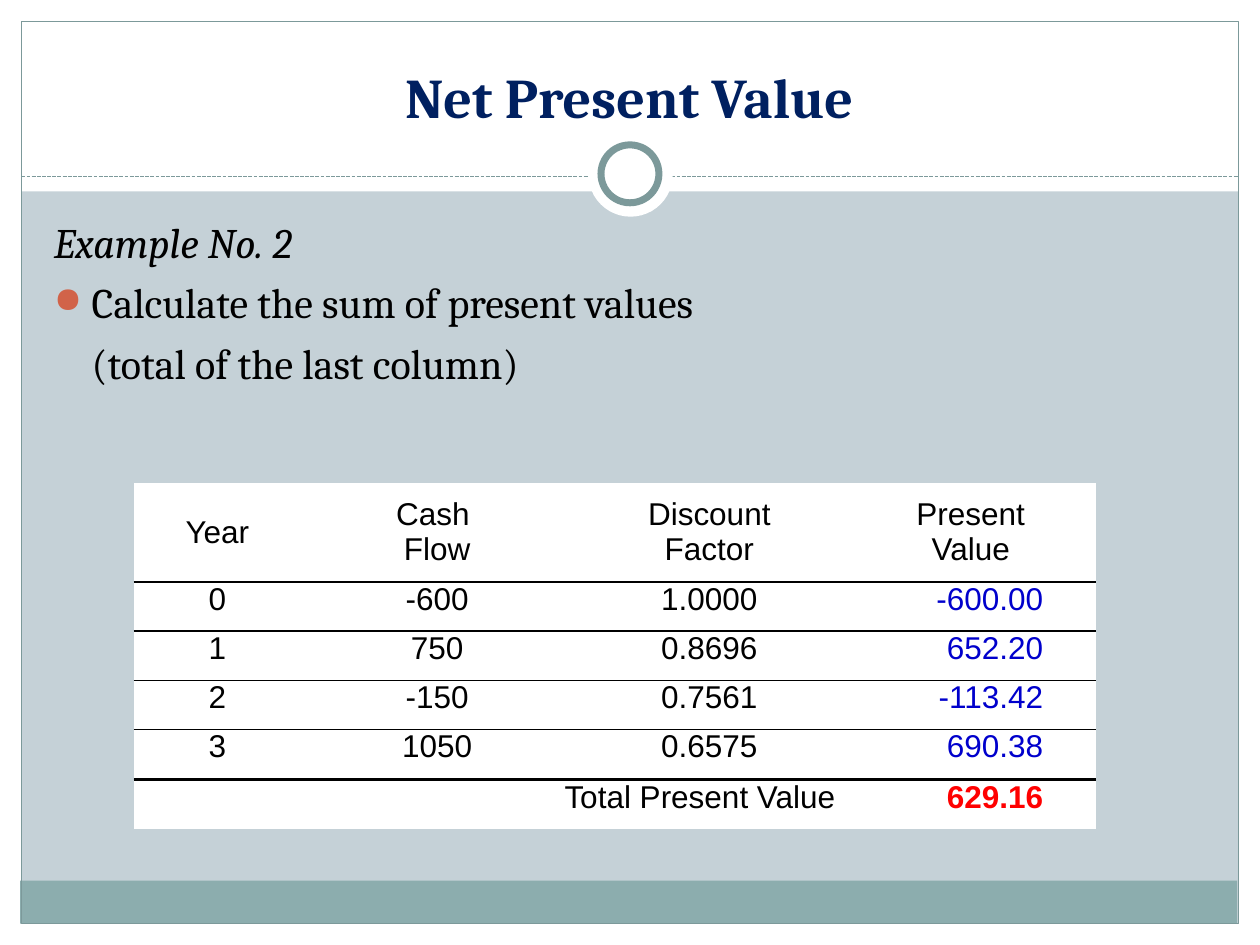
from lxml import etree
from pptx import Presentation
from pptx import util as u
from pptx.dml.color import RGBColor
from pptx.enum import dml, shapes, text
from pptx.oxml import ns

BACKDROP = RGBColor(0xC5, 0xD1, 0xD7)
WHITE = RGBColor(0xFF, 0xFF, 0xFF)
BLACK = RGBColor(0, 0, 0)
TEAL = RGBColor(0x8C, 0xAD, 0xAE)
SLATE = RGBColor(0x7C, 0x99, 0x9A)
NAVY = RGBColor(0x00, 0x20, 0x60)
RUST = RGBColor(0xD1, 0x63, 0x49)
BLUE = RGBColor(0x00, 0x00, 0xCC)
RED = RGBColor(0xFF, 0, 0)

LEFT, CENTER, RIGHT = text.PP_ALIGN.LEFT, text.PP_ALIGN.CENTER, text.PP_ALIGN.RIGHT
TOP, MIDDLE, BOTTOM = (text.MSO_ANCHOR.TOP, text.MSO_ANCHOR.MIDDLE,
                       text.MSO_ANCHOR.BOTTOM)
RECT, OVAL = shapes.MSO_SHAPE.RECTANGLE, shapes.MSO_SHAPE.OVAL


def inches(*values):
    return [u.Inches(v) for v in values]


def add_xml(parent, tag, **attrs):
    return etree.SubElement(parent, ns.qn(tag), {k: str(v) for k, v in attrs.items()})


class SlideBuilder:
    TITLE = {"name": "Cambria", "size": u.Pt(32), "bold": True}
    BODY = {"name": "Cambria", "size": u.Pt(24)}
    TABLE = {"name": "Arial", "size": u.Pt(18)}

    def __init__(self, prs):
        self.s = prs.slides.add_slide(prs.slide_layouts[6])
        fill = self.s.background.fill
        fill.solid()
        fill.fore_color.rgb = BACKDROP

    def shape(self, kind, box, fill=None, line=None, width=0.75):
        sp = self.s.shapes.add_shape(kind, *inches(*box))
        sp.shadow.inherit = False
        if fill is None:
            sp.fill.background()
        else:
            sp.fill.solid()
            sp.fill.fore_color.rgb = fill
        if line is None:
            sp.line.fill.background()
        else:
            sp.line.color.rgb = line
            sp.line.width = u.Pt(width)

    def dashed_line(self, x1, y1, x2, y2):
        sp = self.s.shapes.add_connector(shapes.MSO_CONNECTOR.STRAIGHT,
                                         *inches(x1, y1, x2, y2))
        sp.line.color.rgb = SLATE
        sp.line.width = u.Pt(0.75)
        sp.line.dash_style = dml.MSO_LINE.SQUARE_DOT
        add_xml(sp._element.spPr, "a:effectLst")

    def textbox(self, box, anchor=TOP):
        tf = self.s.shapes.add_textbox(*inches(*box)).text_frame
        tf.word_wrap = True
        tf.vertical_anchor = anchor
        return tf

    def add_text(self, p, words, style, color=BLACK, align=LEFT, **extra):
        p.alignment = align
        r = p.add_run()
        r.text = words
        for key, value in {**style, **extra}.items():
            setattr(r.font, key, value)
        r.font.color.rgb = color

    def indent(self, p, margin, first=0.0, bullet=None):
        pPr = p._p.get_or_add_pPr()
        pPr.set("marL", str(u.Inches(margin)))
        pPr.set("indent", str(u.Inches(first)))
        if bullet:
            add_xml(add_xml(pPr, "a:buClr"), "a:srgbClr", val=RUST)
            add_xml(pPr, "a:buSzPct", val=85000)
            add_xml(pPr, "a:buChar", char=bullet)

    def table(self, box, widths, heights):
        frame = self.s.shapes.add_table(len(heights), len(widths), *inches(*box))
        table = frame.table
        table.first_row = table.horz_banding = False
        for col, w in zip(table.columns, widths):
            col.width = u.Inches(w)
        for row, h in zip(table.rows, heights):
            row.height = u.Inches(h)
        return table

    def cell(self, cell, lines=(), color=BLACK, align=CENTER, anchor=TOP,
             right=0.08, rules=("B",), **extra):
        margins = {"margin_left": 0.08, "margin_right": right,
                   "margin_top": 0, "margin_bottom": 0}
        for key, value in margins.items():
            setattr(cell, key, u.Inches(value))
        cell.vertical_anchor = anchor
        tcPr = cell._tc.get_or_add_tcPr()
        for side in "LRTB":
            ln = add_xml(tcPr, f"a:ln{side}", w=u.Pt(1))
            if side in rules:
                add_xml(add_xml(ln, "a:solidFill"), "a:srgbClr", val=BLACK)
            else:
                add_xml(ln, "a:noFill")
        cell.fill.solid()
        cell.fill.fore_color.rgb = WHITE
        tf = cell.text_frame
        for i, words in enumerate(lines):
            p = tf.add_paragraph() if i else tf.paragraphs[0]
            self.add_text(p, words, self.TABLE, color, align, **extra)


def main():
    prs = Presentation()
    prs.slide_width, prs.slide_height = inches(10, 7.5)
    b = SlideBuilder(prs)

    # Frame: white margins, footer band, outline
    for box in ((0, 7.33, 10, 0.17), (0, 0, 10, 1.52),
                (0, 0, 0.17, 7.5), (9.83, 0, 0.17, 7.5)):
        b.shape(RECT, box, WHITE)
    b.shape(RECT, (0.16, 6.99, 9.66, 0.34), TEAL)
    b.shape(RECT, (0.17, 0.17, 9.66, 7.16), line=SLATE)

    # Divider with ring
    b.dashed_line(0.17, 1.4, 9.83, 1.4)
    b.shape(OVAL, (4.67, 1.05, 0.67, 0.67), WHITE)
    b.shape(OVAL, (4.77, 1.15, 0.46, 0.46), WHITE, SLATE, 4)

    # Title
    tf = b.textbox((0.33, 0.25, 9.33, 0.83), BOTTOM)
    b.add_text(tf.paragraphs[0], "Net Present Value", b.TITLE, NAVY, CENTER)

    # Body
    tf = b.textbox((0.33, 1.67, 9.16, 2))
    body = [("Example No. 2", True, (0,)),
            ("Calculate the sum of present values", False, (0.3, -0.3, "●")),
            ("(total of the last column)", False, (0.3,))]
    for i, (words, italic, indent) in enumerate(body):
        p = tf.add_paragraph() if i else tf.paragraphs[0]
        p.space_before = u.Pt(5.6)
        b.indent(p, *indent)
        b.add_text(p, words, b.BODY, italic=italic)

    # Cash flow table
    widths, row_h = (1.33, 2.16, 2.16, 1.99), 0.39
    header = (["Year"], ["Cash ", "Flow"], ["Discount", "Factor"], ["Present", "Value"])
    rows = [("0", "-600", "1.0000", "-600.00"),
            ("1", "750", "0.8696", "652.20"),
            ("2", "-150", "0.7561", "-113.42"),
            ("3", "1050", "0.6575", "690.38")]
    amount = {"align": RIGHT, "right": 0.42}
    table = b.table((1.06, 3.83, 7.64, 2.36), widths, [0.79] + [row_h] * len(rows))
    for c, lines in enumerate(header):
        b.cell(table.cell(0, c), lines, anchor=MIDDLE)
    for r, row in enumerate(rows, 1):
        for c, value in enumerate(row):
            style = {"color": BLUE, **amount} if c == 3 else {}
            b.cell(table.cell(r, c), [value], rules="TB", **style)

    # Total row
    total = b.table((1.06, 6.19, 7.64, row_h), widths, [row_h])
    total.cell(0, 0).merge(total.cell(0, 2))
    b.cell(total.cell(0, 0), ["Total Present Value"], align=RIGHT, rules="T")
    b.cell(total.cell(0, 3), ["629.16"], RED, rules="T", bold=True, **amount)

    prs.save("out.pptx")


if __name__ == "__main__":
    main()
